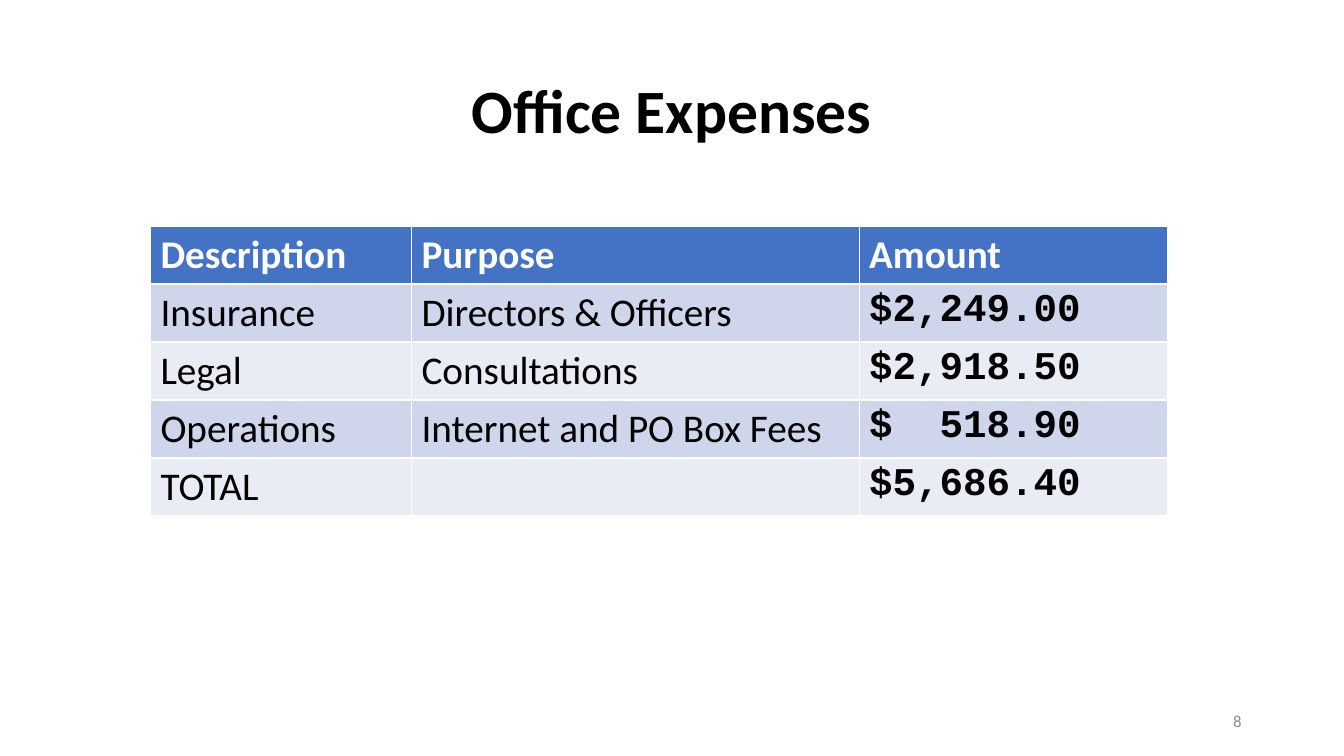
from dataclasses import dataclass

from pptx import Presentation
from pptx.dml.color import RGBColor
from pptx.enum import text
from pptx.util import Pt


@dataclass(frozen=True)
class Theme:
    font: str = "Calibri"
    mono: str = "Courier New"
    ink: str = "000000"
    white: str = "FFFFFF"
    grey: str = "8C8C8C"
    header: str = "4472C4"
    bands: tuple = ("CFD5EA", "E9EBF5")
    title_size: float = 44
    table_size: float = 28
    number_size: float = 12


THEME = Theme()
COLUMN_WIDTHS = (186.5, 319.7, 220.3)
ROW_HEIGHT = 41.4
EXPENSES = (
    ("Description", "Purpose", "Amount"),
    ("Insurance", "Directors & Officers", "$2,249.00"),
    ("Legal", "Consultations", "$2,918.50"),
    ("Operations", "Internet and PO Box Fees", "$  518.90"),
    ("TOTAL", "", "$5,686.40"),
)


def write(tf, words, size, color=THEME.ink, font=THEME.font, bold=False,
          align=text.PP_ALIGN.LEFT, anchor=None, line_spacing=None):
    p = tf.paragraphs[0]
    p.alignment = align
    p.line_spacing = line_spacing
    p.font.size = Pt(size)
    if anchor is not None:
        tf.word_wrap = True
        tf.vertical_anchor = anchor
    if words:
        r = p.add_run()
        r.text = words
        r.font.size, r.font.name, r.font.bold = Pt(size), font, bold
        r.font.color.rgb = RGBColor.from_string(color)


def add_title(s, words, left, top, width, height):
    sp = s.shapes.title
    sp.left, sp.top, sp.width, sp.height = map(Pt, (left, top, width, height))
    sp.text_frame.auto_size = text.MSO_AUTO_SIZE.NONE
    write(sp.text_frame, words, THEME.title_size, bold=True,
          align=text.PP_ALIGN.CENTER, anchor=text.MSO_ANCHOR.MIDDLE,
          line_spacing=0.9)


def add_expense_table(s, rows, left, top):
    table = s.shapes.add_table(
        len(rows), len(COLUMN_WIDTHS), Pt(left), Pt(top),
        Pt(sum(COLUMN_WIDTHS)), Pt(ROW_HEIGHT * len(rows))).table
    for column, width in zip(table.columns, COLUMN_WIDTHS):
        column.width = Pt(width)
    for i, row in enumerate(rows):
        table.rows[i].height = Pt(ROW_HEIGHT)
        is_header = i == 0
        fill = THEME.header if is_header else THEME.bands[(i - 1) % 2]
        for j, words in enumerate(row):
            cell = table.cell(i, j)
            cell.fill.solid()
            cell.fill.fore_color.rgb = RGBColor.from_string(fill)
            is_amount = not is_header and j == len(row) - 1
            write(cell.text_frame, words, THEME.table_size,
                  color=THEME.white if is_header else THEME.ink,
                  font=THEME.mono if is_amount else THEME.font,
                  bold=is_header or is_amount)


def add_page_number(s, number, left, top, width, height):
    sp = s.shapes.add_textbox(*map(Pt, (left, top, width, height)))
    write(sp.text_frame, str(number), THEME.number_size, color=THEME.grey,
          align=text.PP_ALIGN.RIGHT, anchor=text.MSO_ANCHOR.MIDDLE)


def add_expenses_slide(prs):
    s = prs.slides.add_slide(prs.slide_layouts[5])
    add_title(s, "Office Expenses", 66, 28.8, 828, 104.4)
    add_expense_table(s, EXPENSES, 107.5, 161.4)
    add_page_number(s, 8, 678, 500.5, 216, 28.8)


def main():
    prs = Presentation()
    prs.slide_width, prs.slide_height = Pt(960), Pt(540)
    add_expenses_slide(prs)
    prs.save("out.pptx")


if __name__ == "__main__":
    main()
